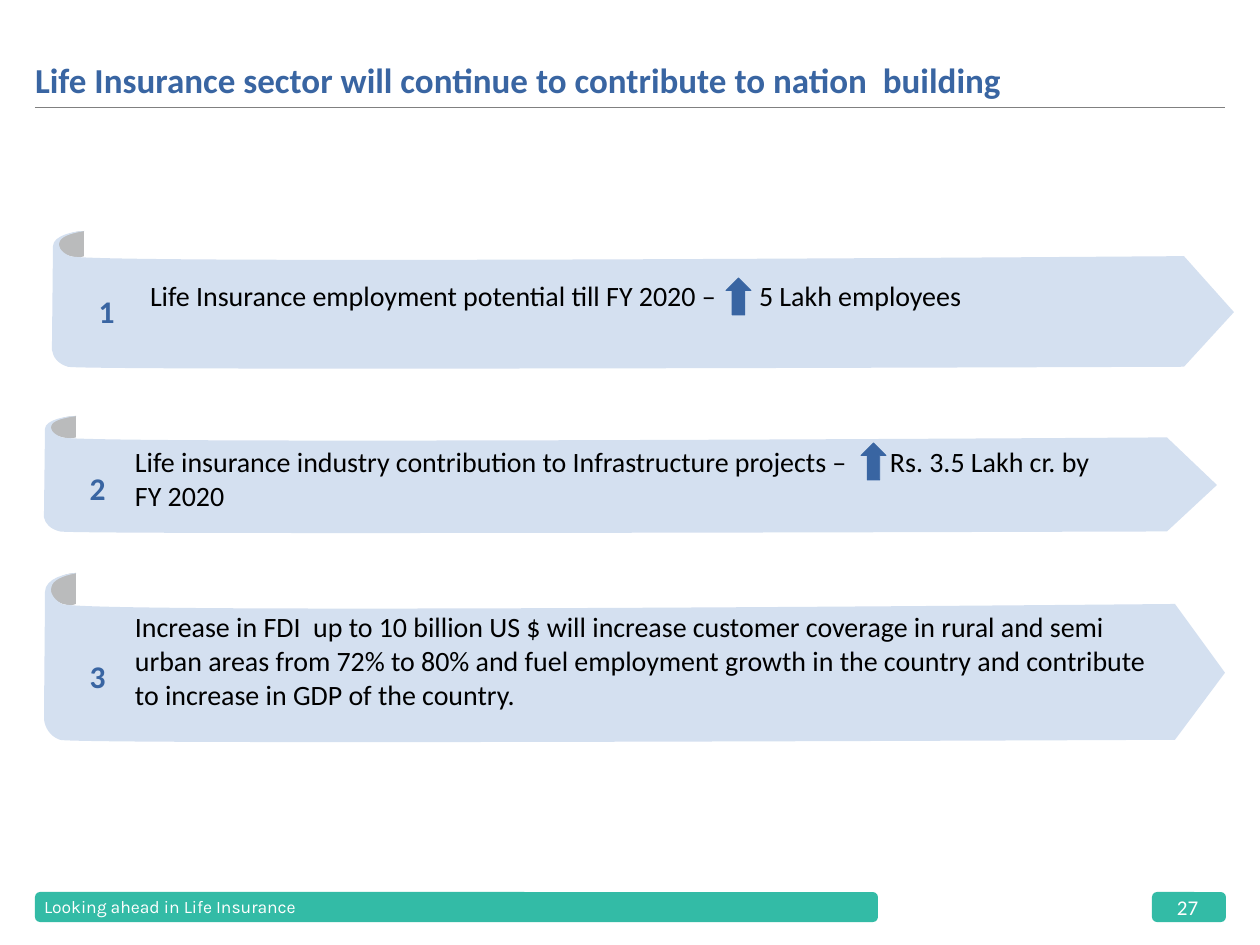
import pptx
import pptx.dml.color
import pptx.enum.shapes
import pptx.enum.text
import pptx.oxml.ns
import pptx.util
import lxml.etree

SCALE = 914400 / 126
SHAPES = pptx.enum.shapes.MSO_SHAPE
ALIGN = pptx.enum.text.PP_ALIGN
ANCHOR = pptx.enum.text.MSO_ANCHOR
BLUE, PALE, GREY, GREEN = "3965A2", "D4E0F0", "BABBBC", "33BBA6"


def emu(px):
    """Turn px into EMU."""
    return round(px * SCALE)


def color(value):
    """Turn a hex string into a colour."""
    return pptx.dml.color.RGBColor.from_string(value)


class Painter:
    """Hold the style and the current slide."""

    font = "Calibri"

    def __init__(self, page):
        """Start on a page."""
        self.page = page

    def finish(self, shape, fill, line=None):
        """Apply fill, outline and no shadow."""
        shape.shadow.inherit = False
        shape.fill.solid()
        shape.fill.fore_color.rgb = color(fill)
        if line:
            shape.line.color.rgb = color(line)
            shape.line.width = pptx.util.Pt(0.5)
        else:
            shape.line.fill.background()

    def shape(self, kind, left, top, width, height, fill, line=None):
        """Draw a preset shape."""
        shape = self.page.shapes.add_shape(kind, *map(emu, (left, top, width, height)))
        self.finish(shape, fill, line)
        return shape

    def bar(self, left, width):
        """Draw a rounded footer bar."""
        self.shape(SHAPES.ROUNDED_RECTANGLE, left, 892, width, 30, GREEN).adjustments[0] = 0.17

    def rule(self, left, right, y):
        """Draw a thin horizontal rule."""
        line = self.page.shapes.add_connector(
            pptx.enum.shapes.MSO_CONNECTOR.STRAIGHT, *map(emu, (left, y, right, y)))
        line.line.color.rgb = color("808080")
        line.line.width = pptx.util.Pt(0.5)
        lxml.etree.SubElement(line._element.spPr, pptx.oxml.ns.qn("a:effectLst"))

    def curved(self, points, fill):
        """Draw cubic curves, three points each, then a line back to the start."""
        points = [(emu(x), emu(y)) for x, y in points]
        builder = self.page.shapes.build_freeform(*points[0], scale=1.0)
        builder.add_line_segments(points[1:] + points[:1], close=True)
        shape = builder.convert_to_shape()
        self.finish(shape, fill)
        lines = list(shape._element.iter(pptx.oxml.ns.qn("a:lnTo")))[:-1]
        for first in range(0, len(lines), 3):
            curve = lxml.etree.Element(pptx.oxml.ns.qn("a:cubicBezTo"))
            lines[first].addprevious(curve)
            for line in lines[first:first + 3]:
                curve.append(line[0])
                line.getparent().remove(line)

    def banner(self, left, top, width, height):
        """Draw a pointed banner with a curled corner."""
        end = width - 50
        curl = [(32, 0),
                (32, 0), (13, 0), (6, 0.08),
                (0, 0.15), (24, 0.21), (32, 0.18)]
        body = [(width, 0.58),
                (end, 0.97), (end, 0.97), (end, 0.97),
                (end, 0.97), (28, 1), (16, 0.97),
                (6, 0.95), (1, 0.9), (0, 0.85),
                (0, 0.79), (1, 0.19), (1, 0.11),
                (1, 0.03), (23, 0), (33, 0),
                (24, 0.01), (11, 0.03), (8, 0.07),
                (5, 0.1), (8, 0.15), (18, 0.18),
                (40, 0.24), (end, 0.18), (end, 0.18)]
        for points, fill in ((curl, GREY), (body, PALE)):
            self.curved([(left + x, top + y * height) for x, y in points], fill)

    def text(self, words, left, top, width, height, size=16, fill="000000", bold=False,
             font=None, align=ALIGN.LEFT, anchor=ANCHOR.MIDDLE, inset=(0, 0), wrap=True, tab=None):
        """Write a text box."""
        box = self.page.shapes.add_textbox(*map(emu, (left, top, width, height)))
        frame = box.text_frame
        frame.word_wrap = wrap
        frame.vertical_anchor = anchor
        frame.margin_left = frame.margin_right = emu(inset[0])
        frame.margin_top = frame.margin_bottom = emu(inset[1])
        para = frame.paragraphs[0]
        para.alignment = align
        if tab:
            stops = lxml.etree.SubElement(para._p.get_or_add_pPr(), pptx.oxml.ns.qn("a:tabLst"))
            lxml.etree.SubElement(stops, pptx.oxml.ns.qn("a:tab"), pos=str(emu(tab)), algn="l")
        span = para.add_run()
        span.text = words
        span.font.name = font or self.font
        span.font.size = pptx.util.Pt(size)
        span.font.bold = bold
        span.font.color.rgb = color(fill)


def main():
    """Build the deck."""
    deck = pptx.Presentation()
    deck.slide_width, deck.slide_height = emu(1260), emu(945)
    painter = Painter(deck.slides.add_slide(deck.slide_layouts[6]))

    painter.bar(35, 843)
    painter.bar(1152, 74)
    painter.text("27", 1177, 895, 25, 25, size=12, fill="FFFFFF", wrap=False)
    painter.text("Looking ahead in Life Insurance", 44, 894, 397, 25,
                 size=10, fill="FFFFFF", font="Karla", wrap=False)
    painter.rule(35, 1225, 107)
    painter.text("Life Insurance sector will continue to contribute to nation  building",
                 35, 12, 1190, 89, size=20, fill=BLUE, bold=True, anchor=ANCHOR.BOTTOM)

    points = [
        ((52, 231, 1182, 140), (41, 278, 131, 66), (137, 273, 1089, 47), 609,
         "Life Insurance employment potential till FY 2020 –\t5 Lakh employees"),
        ((44, 416, 1173, 119), (32, 440, 131, 95), (122, 439, 1004, 116), 755,
         "Life insurance industry contribution to Infrastructure projects –\tRs. 3.5 Lakh cr. by FY 2020"),
        ((44, 573, 1181, 172), (32, 608, 131, 136), (122, 604, 1053, 166), None,
         "Increase in FDI  up to 10 billion US $ will increase customer coverage in rural and semi "
         "urban areas from 72% to 80% and fuel employment growth in the country and contribute "
         "to increase in GDP of the country."),
    ]
    for number, (banner, badge, body, tab, words) in enumerate(points, 1):
        painter.banner(*banner)
        painter.text(str(number), *badge, size=18, fill=BLUE, bold=True, align=ALIGN.CENTER)
        painter.text(words, *body, anchor=ANCHOR.TOP, inset=(13, 6), tab=tab)

    for left, top in ((726, 278), (861, 443)):
        painter.shape(SHAPES.UP_ARROW, left, top, 25, 37, BLUE, line=BLUE)

    deck.save("out.pptx")


if __name__ == "__main__":
    main()
